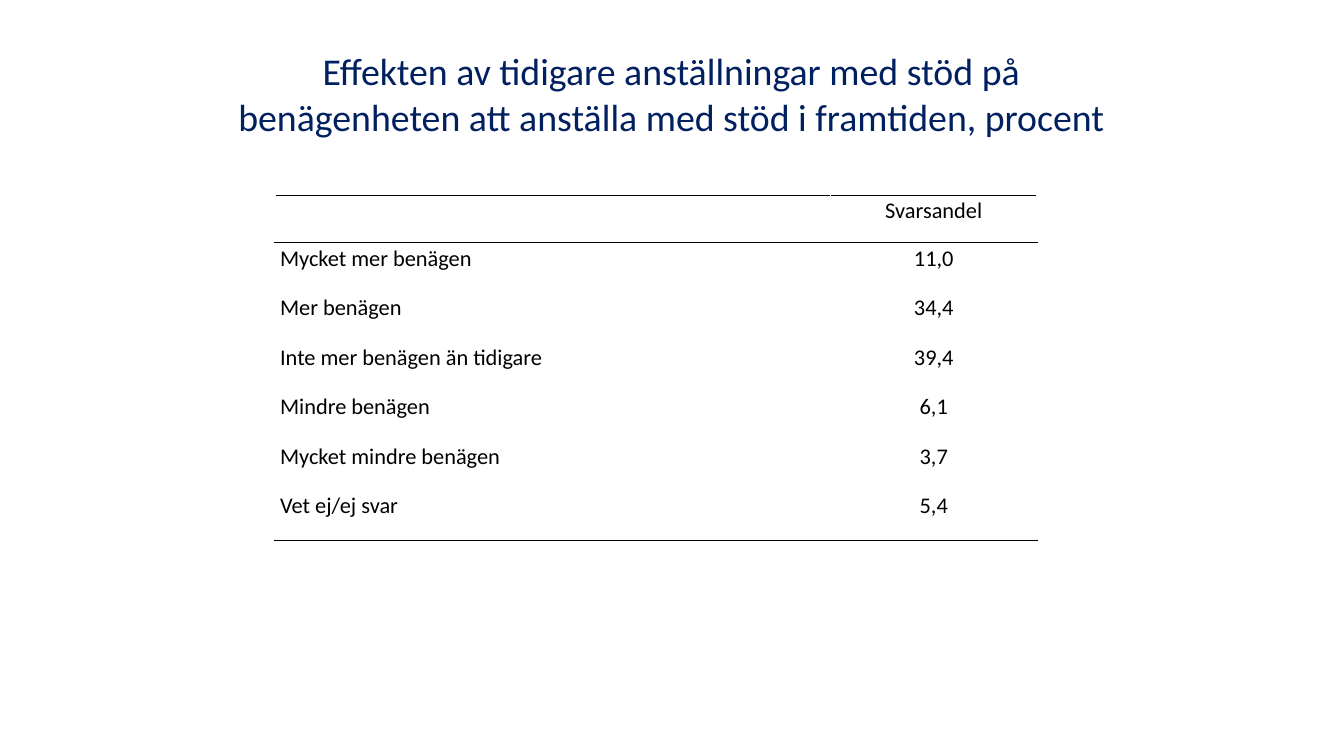
from lxml import etree
from pptx import Presentation
from pptx.dml.color import RGBColor
from pptx.enum.text import MSO_ANCHOR, PP_ALIGN
from pptx.oxml.ns import qn
from pptx.util import Pt

CENTER, LEFT = PP_ALIGN.CENTER, PP_ALIGN.LEFT
MIDDLE, TOP = MSO_ANCHOR.MIDDLE, MSO_ANCHOR.TOP
NAVY = RGBColor(0x00, 0x20, 0x60)
BLACK = RGBColor(0x00, 0x00, 0x00)
FONT = "Calibri"

HEADING = ("Effekten av tidigare anställningar med stöd på "
           "benägenheten att anställa med stöd i framtiden, procent")
ANSWERS = [
    ("", "Svarsandel"),
    ("Mycket mer benägen", "11,0"),
    ("Mer benägen", "34,4"),
    ("Inte mer benägen än tidigare", "39,4"),
    ("Mindre benägen", "6,1"),
    ("Mycket mindre benägen", "3,7"),
    ("Vet ej/ej svar", "5,4"),
]


def style_paragraph(paragraph, size, color, align):
    paragraph.alignment = align
    paragraph.font.name = FONT
    paragraph.font.size = Pt(size)
    paragraph.font.color.rgb = color


def add_rule(cell, side):
    rule = etree.SubElement(cell._tc.get_or_add_tcPr(), qn(f"a:{side}"), w=str(Pt(1)))
    fill = etree.SubElement(rule, qn("a:solidFill"))
    etree.SubElement(fill, qn("a:srgbClr"), val=str(BLACK))


def add_heading(slide, left, top, width, height):
    heading = slide.shapes.add_textbox(Pt(left), Pt(top), Pt(width), Pt(height)).text_frame
    heading.word_wrap = True
    heading.vertical_anchor = MIDDLE
    heading.text = HEADING
    style_paragraph(heading.paragraphs[0], 27, NAVY, CENTER)


def add_answers(slide, left, top, width, height):
    last = len(ANSWERS) - 1
    header_height, share_width = 34, 147.6
    answers = slide.shapes.add_table(
        len(ANSWERS), 2, Pt(left), Pt(top), Pt(width), Pt(height)).table
    answers.first_row = False
    answers.horz_banding = False
    answers.columns[0].width = Pt(width - share_width)
    answers.columns[1].width = Pt(share_width)
    for r, texts in enumerate(ANSWERS):
        answers.rows[r].height = Pt((height - header_height) / last if r else header_height)
        for c, text in enumerate(texts):
            cell = answers.cell(r, c)
            cell.margin_left = cell.margin_right = Pt(3.6)
            cell.margin_top = cell.margin_bottom = Pt(0)
            cell.vertical_anchor = TOP
            cell.text = text
            paragraph = cell.text_frame.paragraphs[0]
            paragraph.line_spacing = 1.07
            style_paragraph(paragraph, 16, BLACK, CENTER if c else LEFT)
            if r in (0, 1):
                add_rule(cell, "lnT")
            if r in (0, last):
                add_rule(cell, "lnB")
            cell.fill.background()


def main():
    deck = Presentation()
    deck.slide_width, deck.slide_height = Pt(960), Pt(540)
    slide = deck.slides.add_slide(deck.slide_layouts[6])
    add_heading(slide, 156, 21.6, 647, 90)
    add_answers(slide, 196.5, 139.5, 544.3, 246.5)
    deck.save("out.pptx")


if __name__ == "__main__":
    main()
